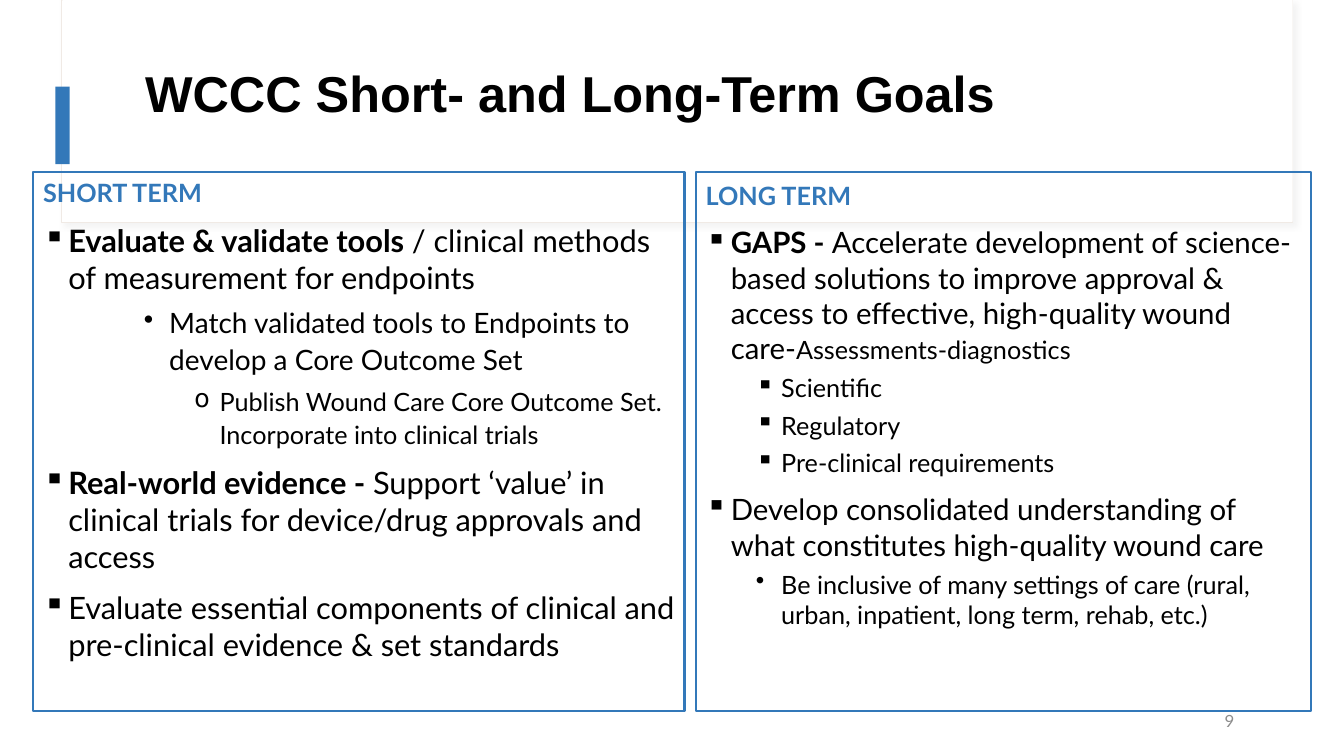
from dataclasses import dataclass

from lxml.etree import SubElement
from pptx import Presentation
from pptx.dml.color import RGBColor
from pptx.enum.shapes import MSO_SHAPE as Preset
from pptx.enum.text import MSO_ANCHOR as Anchor, PP_ALIGN as Align
from pptx.oxml.ns import qn
from pptx.util import Inches, Pt

COLORS = {"blue": "3378B9", "black": "000000", "white": "FFFFFF",
          "edge": "F0EAE5", "shade": "D9D9D9", "gray": "8C8C8C"}


@dataclass
class Span:
    text: str
    size: float
    bold: bool = False
    color: str = "black"
    font: str = "Lato"


@dataclass
class Para:
    spans: list[Span]
    bullet: str = ""
    indent: float = 0
    before: float = 10
    spacing: float = 1.0
    align: Align = Align.LEFT


@dataclass
class Box:
    left: float
    top: float
    width: float
    height: float
    fill: str = ""
    line: str = ""
    weight: float = 0


def color_of(name: str) -> RGBColor:
    return RGBColor.from_string(COLORS[name])


def draw_box(page, box: Box):
    shape = page.shapes.add_shape(Preset.RECTANGLE, *map(
        Inches, (box.left, box.top, box.width, box.height)))
    shape.shadow.inherit = False
    for part, color in ((shape.fill, box.fill), (shape.line.fill, box.line)):
        if color:
            part.solid()
            part.fore_color.rgb = color_of(color)
        else:
            part.background()
    if box.line:
        shape.line.width = Pt(box.weight)
    return shape


def add_shadow(shape) -> None:
    effects = shape._element.spPr.find(qn("a:effectLst"))
    shadow = SubElement(effects, qn("a:outerShdw"), blurRad=str(Pt(4)),
                        dist=str(Pt(3)), dir=str(45 * 60000), rotWithShape="0")
    tint = SubElement(shadow, qn("a:srgbClr"), val=COLORS["shade"])
    SubElement(tint, qn("a:alpha"), val="30000")


def write_text(shape, paras: list[Para], anchor: Anchor) -> None:
    frame = shape.text_frame
    frame.word_wrap = True
    frame.vertical_anchor = anchor
    for index, para in enumerate(paras):
        target = frame.paragraphs[0] if index == 0 else frame.add_paragraph()
        formats = {"alignment": para.align, "space_before": Pt(para.before),
                   "space_after": Pt(0), "line_spacing": para.spacing}
        for name, value in formats.items():
            setattr(target, name, value)
        if para.bullet:
            props = target._p.get_or_add_pPr()
            props.set("marL", str(Inches(para.indent)))
            props.set("indent", str(Inches(-0.25)))
            SubElement(props, qn("a:buChar"), char=para.bullet)
        for span in para.spans:
            run = target.add_run()
            run.text = span.text
            formats = {"size": Pt(span.size), "bold": span.bold, "name": span.font}
            for name, value in formats.items():
                setattr(run.font, name, value)
            run.font.color.rgb = color_of(span.color)


def draw_text(page, box: Box, para: Para) -> None:
    shape = page.shapes.add_textbox(*map(
        Inches, (box.left, box.top, box.width, box.height)))
    write_text(shape, [para], Anchor.MIDDLE)


def heading(text: str, spacing: float = 1.0) -> Para:
    return Para([Span(text, 18, True, "blue")], spacing=spacing)


def goal(size: float, lead: str, *rest: Span) -> Para:
    return Para([Span(lead, size, bool(rest)), *rest], "▪", 0.25)


def detail(text: str, bullet: str = "▪", indent: float = 0.75,
           size: float = 18, spacing: float = 1.0) -> Para:
    return Para([Span(text, size)], bullet, indent, 5, spacing)


SHORT_TERM = [
    heading("SHORT TERM"),
    goal(22, "Evaluate & validate tools ",
         Span("/ clinical methods of measurement for endpoints", 22)),
    detail("Match validated tools to Endpoints to develop a Core Outcome Set",
           "•", 1.25, 20, 1.1),
    detail("Publish Wound Care Core Outcome Set. Incorporate into clinical trials",
           "o", 1.75, 18, 1.1),
    goal(22, "Real-world evidence - ",
         Span("Support ‘value’ in clinical trials for device/drug approvals "
              "and access", 22)),
    goal(22, "Evaluate essential components of clinical and pre-clinical "
             "evidence & set standards"),
]
LONG_TERM = [
    heading("LONG TERM", 1.1),
    goal(21, "GAPS - ",
         Span("Accelerate development of science-based solutions to improve "
              "approval & access to effective, high-quality wound care-", 21),
         Span("Assessments-diagnostics", 18)),
    *map(detail, ("Scientific", "Regulatory", "Pre-clinical requirements")),
    goal(21, "Develop consolidated understanding of what constitutes "
             "high-quality wound care"),
    detail("Be inclusive of many settings of care (rural, urban, inpatient, "
           "long term, rehab, etc.)", "•"),
]


def main() -> None:
    deck = Presentation()
    deck.slide_width, deck.slide_height = Inches(13.33), Inches(7.5)
    page = deck.slides.add_slide(deck.slide_layouts[6])

    # Title band with its accent bar
    add_shadow(draw_box(page, Box(0.61, 0, 12.21, 2.21, "white", "edge", 0.75)))
    draw_box(page, Box(0.62, 0, 12.2, 2.2, "white"))
    draw_box(page, Box(0.55, 0.86, 0.14, 0.77, "blue"))
    title = Span("WCCC Short- and Long-Term Goals", 36, True, font="Arial")
    draw_text(page, Box(1.34, 0.31, 11.12, 1.29),
              Para([title], before=0, spacing=0.9))

    # Goal panels
    for left, width, paras in ((0.33, 6.46, SHORT_TERM), (6.9, 6.1, LONG_TERM)):
        panel = draw_box(page, Box(left, 1.71, width, 5.34, line="blue", weight=1.5))
        write_text(panel, paras, Anchor.TOP)

    # Page number
    draw_text(page, Box(9.34, 6.95, 3, 0.4),
              Para([Span("9", 12, color="gray")], before=0, align=Align.RIGHT))

    deck.save("out.pptx")


if __name__ == "__main__":
    main()
